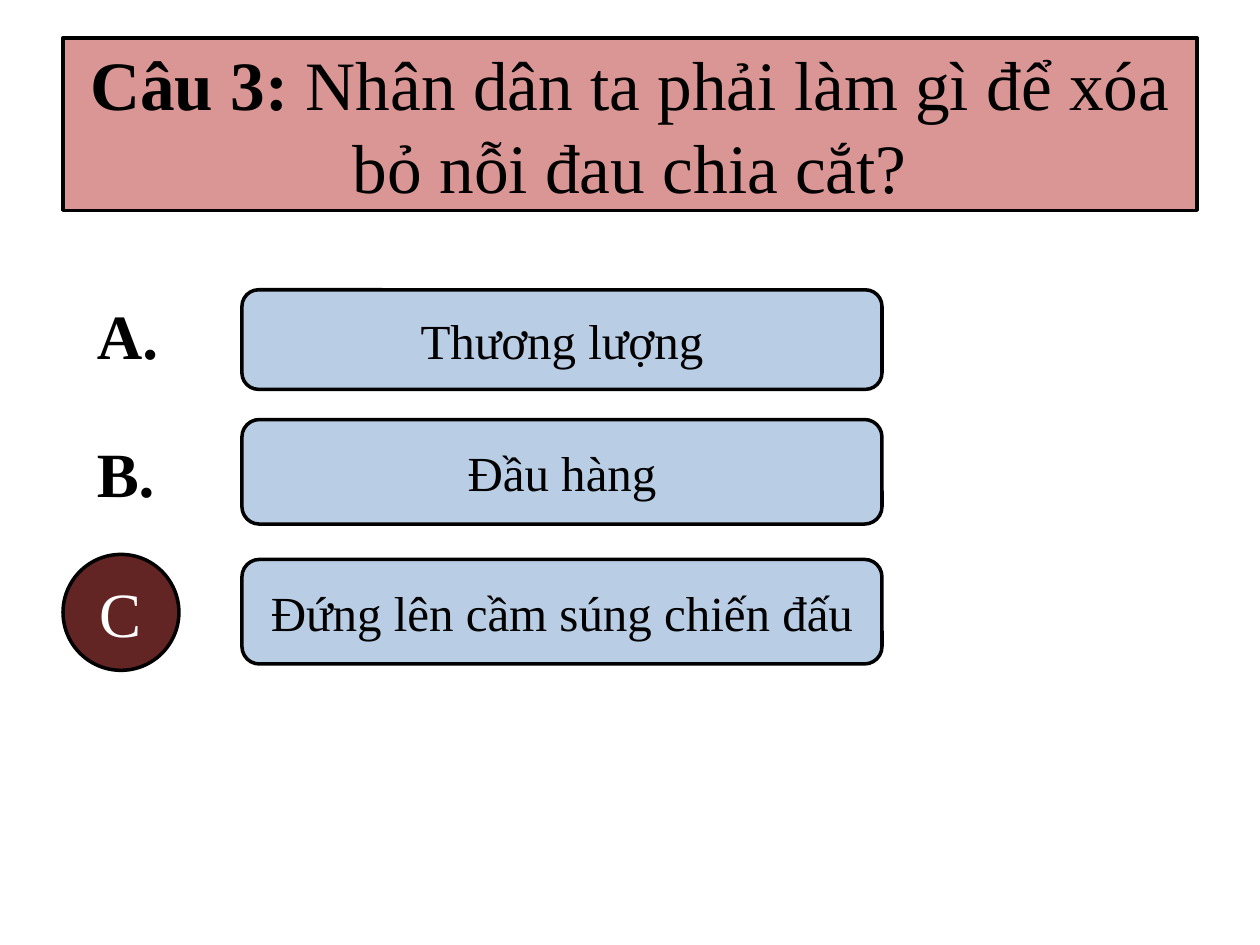
from typing import NamedTuple

from pptx import Presentation
from pptx import util as u
from pptx.dml.color import RGBColor
from pptx.enum import shapes, text

SLIDE_WIDTH, SLIDE_HEIGHT = u.Inches(10), u.Inches(7.5)
COLUMNS, ROWS = 100, 75
FONT = "Times New Roman"
BLACK = RGBColor(0x00, 0x00, 0x00)
WHITE = RGBColor(0xFF, 0xFF, 0xFF)
ROSE = RGBColor(0xD9, 0x96, 0x94)
PALE_BLUE = RGBColor(0xB9, 0xCD, 0xE5)
MAROON = RGBColor(0x63, 0x25, 0x23)


class Area(NamedTuple):
    """A place on the slide, in grid columns and rows."""
    column: float
    row: float
    columns: float
    rows: float

    def lengths(self) -> tuple[int, int, int, int]:
        cell_width, cell_height = SLIDE_WIDTH / COLUMNS, SLIDE_HEIGHT / ROWS
        return (round(self.column * cell_width), round(self.row * cell_height),
                round(self.columns * cell_width), round(self.rows * cell_height))


class Run(NamedTuple):
    words: str
    size: float
    color: RGBColor = BLACK
    bold: bool = False


class Answer(NamedTuple):
    words: str
    row: float
    rows: float


ANSWERS = [
    Answer("Thương lượng", 23, 7.9),
    Answer("Đầu hàng", 33.3, 8.3),
    Answer("Đứng lên cầm súng chiến đấu", 44.4, 8.3),
]
WRONG_LETTERS = "AB"
LETTER_ROW, LETTER_PITCH = 23, 11


def write(paragraph, runs: list[Run]) -> None:
    for item in runs:
        run = paragraph.add_run()
        run.text = item.words
        run.font.name = FONT
        run.font.size = u.Pt(item.size)
        run.font.bold = item.bold
        run.font.color.rgb = item.color


def add_panel(slide, preset: shapes.MSO_SHAPE, area: Area, fill: RGBColor,
              runs: list[Run]) -> None:
    panel = slide.shapes.add_shape(preset, *area.lengths())
    panel.shadow.inherit = False
    panel.fill.solid()
    panel.fill.fore_color.rgb = fill
    panel.line.color.rgb = BLACK
    panel.line.width = u.Pt(2)
    frame = panel.text_frame
    frame.word_wrap = True
    frame.vertical_anchor = text.MSO_ANCHOR.MIDDLE
    frame.paragraphs[0].alignment = text.PP_ALIGN.CENTER
    write(frame.paragraphs[0], runs)


def add_letter(slide, area: Area, letter: str) -> None:
    frame = slide.shapes.add_textbox(*area.lengths()).text_frame
    frame.word_wrap = True
    frame.auto_size = text.MSO_AUTO_SIZE.SHAPE_TO_FIT_TEXT
    write(frame.paragraphs[0], [Run(f"{letter}.", 36, bold=True)])


def main() -> None:
    deck = Presentation()
    deck.slide_width, deck.slide_height = SLIDE_WIDTH, SLIDE_HEIGHT
    slide = deck.slides.add_slide(deck.slide_layouts[6])

    add_panel(slide, shapes.MSO_SHAPE.RECTANGLE, Area(5, 3, 90, 13.7), ROSE, [
        Run("Câu 3: ", 39.6, bold=True),
        Run("Nhân dân ta phải làm gì để xóa bỏ nỗi đau chia cắt?", 39.6),
    ])
    for answer in ANSWERS:
        add_panel(slide, shapes.MSO_SHAPE.ROUNDED_RECTANGLE,
                  Area(19.2, answer.row, 50.8, answer.rows), PALE_BLUE,
                  [Run(answer.words, 28)])
    for index, letter in enumerate(WRONG_LETTERS):
        row = LETTER_ROW + index * LETTER_PITCH
        add_letter(slide, Area(6.7, row, 8.3, 7.1), letter)
    add_panel(slide, shapes.MSO_SHAPE.OVAL, Area(5, 44, 9.2, 9.2), MAROON,
              [Run("C", 36, WHITE)])

    deck.save("out.pptx")


if __name__ == "__main__":
    main()
